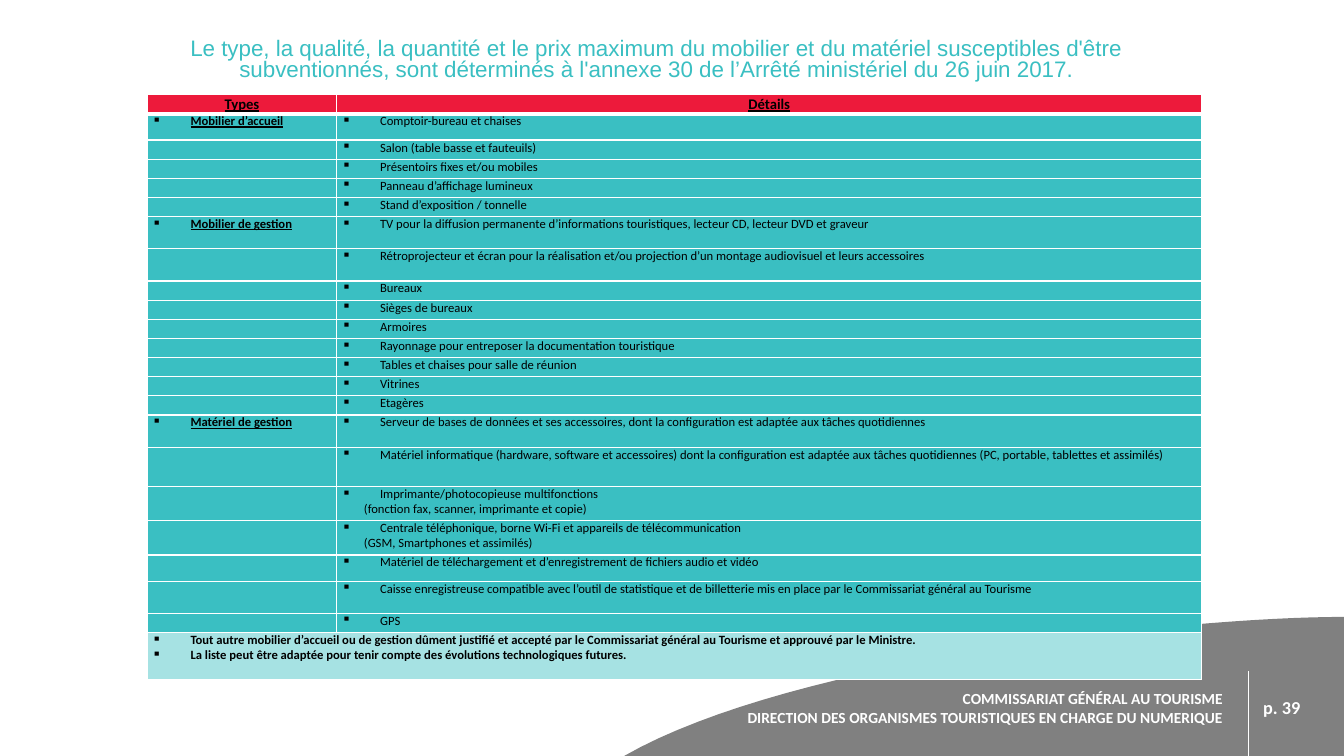
from lxml.etree import SubElement
from pptx import Presentation
from pptx.dml.color import RGBColor
from pptx.enum.shapes import MSO_CONNECTOR
from pptx.enum.text import MSO_ANCHOR as Anchor, PP_ALIGN as Align
from pptx.oxml.ns import qn
from pptx.util import Inches, Pt

WHITE, BLACK, GREY = "FFFFFF", "000000", "808080"
TEAL, PALE_TEAL, RED = "3ABFC2", "A6E2E3", "ED1A3B"

TITLE = (
    "Le type, la qualité, la quantité et le prix maximum du mobilier et du matériel "
    "susceptibles d'être subventionnés, sont déterminés à l'annexe 30 de l’Arrêté "
    "ministériel du 26 juin 2017."
)
LINE, TALL, DOUBLE, WRAPPED = 0.19, 0.26, 0.34, 0.32
EQUIPMENT = {
    "Mobilier d’accueil": [
        ("Comptoir-bureau et chaises", TALL),
        ("Salon (table basse et fauteuils)", LINE),
        ("Présentoirs fixes et/ou mobiles", LINE),
        ("Panneau d’affichage lumineux", LINE),
        ("Stand d’exposition / tonnelle", LINE),
    ],
    "Mobilier de gestion": [
        ("TV pour la diffusion permanente d’informations touristiques, lecteur CD, "
         "lecteur DVD et graveur", WRAPPED),
        ("Rétroprojecteur et écran pour la réalisation et/ou projection d’un montage "
         "audiovisuel et leurs accessoires", WRAPPED),
        ("Bureaux", LINE),
        ("Sièges de bureaux", LINE),
        ("Armoires", LINE),
        ("Rayonnage pour entreposer la documentation touristique", LINE),
        ("Tables et chaises pour salle de réunion", LINE),
        ("Vitrines", LINE),
        ("Etagères", LINE),
    ],
    "Matériel de gestion": [
        ("Serveur de bases de données et ses accessoires, dont la configuration est "
         "adaptée aux tâches quotidiennes", WRAPPED),
        ("Matériel informatique (hardware, software et accessoires) dont la configuration "
         "est adaptée aux tâches quotidiennes (PC, portable, tablettes et assimilés)", 0.39),
        ("Imprimante/photocopieuse multifonctions\n"
         "(fonction fax, scanner, imprimante et copie)", DOUBLE),
        ("Centrale téléphonique, borne Wi-Fi et appareils de télécommunication\n"
         "(GSM, Smartphones et assimilés)", DOUBLE),
        ("Matériel de téléchargement et d’enregistrement de fichiers audio et vidéo", TALL),
        ("Caisse enregistreuse compatible avec l’outil de statistique et de billetterie mis "
         "en place par le Commissariat général au Tourisme", WRAPPED),
        ("GPS", LINE),
    ],
}
CLOSING = [
    "Tout autre mobilier d’accueil ou de gestion dûment justifié et accepté par le "
    "Commissariat général au Tourisme et approuvé par le Ministre.",
    "La liste peut être adaptée pour tenir compte des évolutions technologiques futures.",
]


def rgb(color):
    return RGBColor.from_string(color)


def bezier(start, control1, control2, end, steps=32):
    """Return points along a cubic curve, without its start."""
    points = []
    for step in range(1, steps + 1):
        t = step / steps
        weights = ((1 - t) ** 3, 3 * t * (1 - t) ** 2, 3 * t * t * (1 - t), t ** 3)
        corners = (start, control1, control2, end)
        points.append(tuple(sum(w * c[axis] for w, c in zip(weights, corners))
                            for axis in (0, 1)))
    return points


class SlideBuilder:
    def __init__(self, slide, font="Calibri"):
        self.slide, self.font = slide, font

    def fill_paragraph(self, paragraph, text, color, indent=0, hanging=0, align=None,
                       **formats):
        properties = paragraph._p.get_or_add_pPr()
        properties.set("marL", str(Inches(indent)))
        properties.set("indent", str(Inches(-hanging)))
        if hanging:
            SubElement(properties, qn("a:buChar"), char="▪")
        paragraph.alignment = align
        run = paragraph.add_run()
        run.text = text
        run.font.color.rgb = rgb(color)
        for name, value in ({"name": self.font} | formats).items():
            setattr(run.font, name, value)

    def text(self, box, lines, color, anchor=Anchor.TOP, spacing=None, **formats):
        frame = self.slide.shapes.add_textbox(*map(Inches, box)).text_frame
        frame.word_wrap, frame.vertical_anchor = True, anchor
        for number, line in enumerate(lines):
            paragraph = frame.add_paragraph() if number else frame.paragraphs[0]
            paragraph.line_spacing = spacing
            self.fill_paragraph(paragraph, line, color, **formats)

    def outline(self, points, color):
        start, *others = [(Inches(x), Inches(y)) for x, y in points]
        builder = self.slide.shapes.build_freeform(*start, scale=1.0)
        builder.add_line_segments(others, close=True)
        shape = builder.convert_to_shape()
        shape.shadow.inherit = False
        shape.fill.solid()
        shape.fill.fore_color.rgb = rgb(color)
        shape.line.fill.background()

    def line(self, start, end, color, width):
        rule = self.slide.shapes.add_connector(
            MSO_CONNECTOR.STRAIGHT, *map(Inches, start + end))
        rule.line.color.rgb, rule.line.width = rgb(color), Pt(width)
        SubElement(rule._element.spPr, qn("a:effectLst"))

    def table(self, left, top, widths, heights):
        table = self.slide.shapes.add_table(
            len(heights), len(widths), Inches(left), Inches(top),
            Inches(sum(widths)), Inches(sum(heights))).table
        table.first_row = table.horz_banding = False
        for column, width in zip(table.columns, widths):
            column.width = Inches(width)
        for row, height in zip(table.rows, heights):
            row.height = Inches(height)
        return table

    def cell(self, cell, fill, top=1, bottom=1, anchor=Anchor.TOP):
        """Style a cell; top and bottom are border widths in points."""
        cell.margin_left = cell.margin_right = Inches(0.05)
        cell.margin_top = cell.margin_bottom = 0
        cell.vertical_anchor = anchor
        properties = cell._tc.get_or_add_tcPr()
        for side, width in {"lnL": 1, "lnR": 1, "lnT": top, "lnB": bottom}.items():
            border = SubElement(properties, qn("a:" + side), w=str(Pt(width)))
            SubElement(SubElement(border, qn("a:solidFill")), qn("a:srgbClr"), val=WHITE)
        cell.fill.solid()
        cell.fill.fore_color.rgb = rgb(fill)

    def cell_text(self, cell, lines, **formats):
        for number, line in enumerate(lines):
            frame = cell.text_frame
            paragraph = frame.add_paragraph() if number else frame.paragraphs[0]
            layout = {"indent": 0.22} if line.startswith("(") else {
                "indent": 0.38, "hanging": 0.38}
            self.fill_paragraph(paragraph, line, BLACK,
                                **({"size": Pt(9)} | layout | formats))
        if not lines:
            SubElement(cell.text_frame.paragraphs[0]._p, qn("a:endParaRPr"), sz="900")


def add_equipment_table(page):
    rows = [(kind if number == 0 else "", detail, height)
            for kind, details in EQUIPMENT.items()
            for number, (detail, height) in enumerate(details)]
    heights = [LINE] + [height for _, _, height in rows] + [0.47]
    table = page.table(1.46, 0.94, (1.88, 8.58), heights)

    for column, heading in enumerate(("Types", "Détails")):
        cell = table.cell(0, column)
        page.cell(cell, RED, bottom=3, anchor=Anchor.MIDDLE)
        page.cell_text(cell, [heading], size=Pt(10.5), bold=True, underline=True,
                       align=Align.CENTER, indent=0, hanging=0)

    for number, (kind, detail, _) in enumerate(rows, start=1):
        kind_cell, detail_cell = table.cell(number, 0), table.cell(number, 1)
        for cell in (kind_cell, detail_cell):
            page.cell(cell, TEAL, top=3 if number == 1 else 1)
        page.cell_text(kind_cell, [kind] if kind else [], bold=True, underline=True)
        page.cell_text(detail_cell, detail.split("\n"))

    last = len(heights) - 1
    closing = table.cell(last, 0)
    closing.merge(table.cell(last, 1))
    for column in (0, 1):
        page.cell(table.cell(last, column), PALE_TEAL)
    page.cell_text(closing, CLOSING, bold=True)


def main():
    deck = Presentation()
    deck.slide_width, deck.slide_height = Inches(13.33), Inches(7.5)
    page = SlideBuilder(deck.slides.add_slide(deck.slide_layouts[6]))

    hill_start = (6.19, 7.5)
    hill = bezier(hill_start, (7.88, 6.53), (11.78, 6.12), (13.33, 6.12))
    page.outline([hill_start, *hill, (13.33, 7.5)], GREY)
    footer = {"color": WHITE, "anchor": Anchor.MIDDLE, "indent": 0.5, "bold": True}
    page.text((6.78, 6.66, 5.45, 0.72),
              ["COMMISSARIAT GÉNÉRAL AU TOURISME",
               "DIRECTION DES ORGANISMES TOURISTIQUES EN CHARGE DU NUMERIQUE"],
              size=Pt(11), align=Align.RIGHT, **footer)
    page.line((12.38, 6.66), (12.38, 7.5), WHITE, 0.5)
    page.text((11.93, 6.66, 1.15, 0.72), ["p. 39"], size=Pt(13), **footer)
    page.text((1.37, 0.34, 10.28, 0.53), [TITLE], TEAL, spacing=0.8,
              name="Arial", size=Pt(16), align=Align.CENTER)
    add_equipment_table(page)
    deck.save("out.pptx")


if __name__ == "__main__":
    main()
